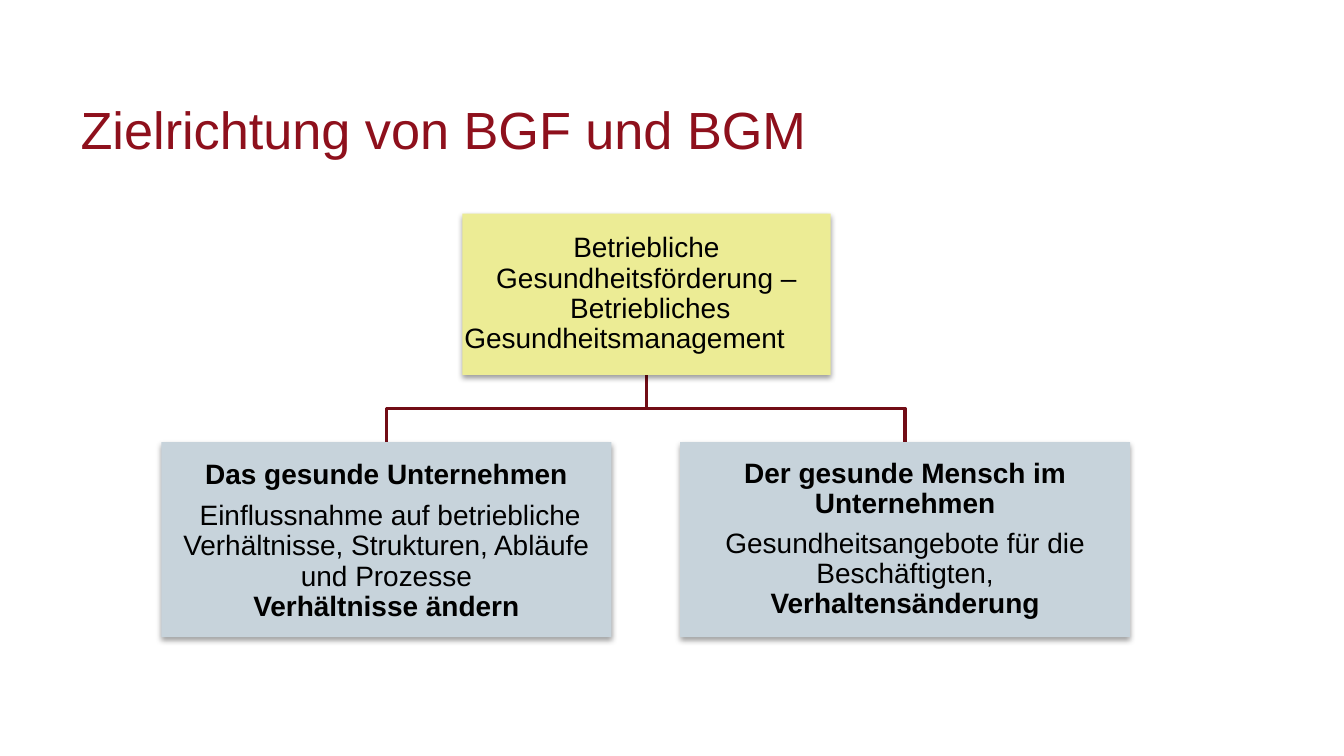
from dataclasses import dataclass

import lxml.etree
import pptx
import pptx.dml.color
import pptx.enum.shapes
import pptx.enum.text
import pptx.oxml
import pptx.util

Inches = pptx.util.Inches
Pt = pptx.util.Pt

TITLE_RED = "8E101C"
LINE_RED = "720D16"
YELLOW = "ECEC95"
GREY_BLUE = "C7D3DB"
BLACK = "000000"

DRAWING_NS = "http://schemas.openxmlformats.org/drawingml/2006/main"
BOX_SHADOW = (
    f'<a:outerShdw xmlns:a="{DRAWING_NS}" blurRad="{Pt(3.1)}" dist="{Pt(1.6)}" '
    'dir="5400000" rotWithShape="0">'
    f'<a:srgbClr val="{BLACK}"><a:alpha val="38000"/></a:srgbClr></a:outerShdw>'
)


@dataclass
class Run:
    text: str
    bold: bool = False
    size: float = 15


@dataclass
class Paragraph:
    runs: list[Run]
    line_spacing: float = 0.9
    space_after: float = 0
    tab_stop: float | None = None


@dataclass
class Box:
    left: float
    top: float
    width: float
    height: float
    fill: str
    paragraphs: list[Paragraph]

    @property
    def center(self) -> float:
        return self.left + self.width / 2

    @property
    def bottom(self) -> float:
        return self.top + self.height


def color(value: str) -> pptx.dml.color.RGBColor:
    return pptx.dml.color.RGBColor.from_string(value)


def add_text(paragraph, text: str, *, size: float, fill: str = BLACK, bold: bool = False) -> None:
    """Append text to a paragraph; a newline becomes a line break."""
    for index, line in enumerate(text.split("\n")):
        if index:
            paragraph.add_line_break()
        run = paragraph.add_run()
        run.text = line
        run.font.name = "Arial"
        run.font.size = Pt(size)
        run.font.bold = bold
        run.font.color.rgb = color(fill)


def add_tab_stop(paragraph, position: float) -> None:
    properties = paragraph._p.get_or_add_pPr()
    tabs = lxml.etree.SubElement(properties, f"{{{DRAWING_NS}}}tabLst")
    lxml.etree.SubElement(tabs, f"{{{DRAWING_NS}}}tab", pos=str(Inches(position)), algn="l")


def draw_box(slide, box: Box) -> None:
    shape = slide.shapes.add_shape(
        pptx.enum.shapes.MSO_SHAPE.RECTANGLE,
        Inches(box.left), Inches(box.top), Inches(box.width), Inches(box.height),
    )
    shape.fill.solid()
    shape.fill.fore_color.rgb = color(box.fill)
    shape.line.fill.background()
    shape.shadow.inherit = False
    effects = shape._element.spPr.find(f"{{{DRAWING_NS}}}effectLst")
    effects.append(pptx.oxml.parse_xml(BOX_SHADOW))

    frame = shape.text_frame
    frame.word_wrap = True
    frame.vertical_anchor = pptx.enum.text.MSO_ANCHOR.MIDDLE
    frame.margin_left = frame.margin_right = Inches(0.01)
    frame.margin_top = frame.margin_bottom = Inches(0.01)
    for index, content in enumerate(box.paragraphs):
        paragraph = frame.add_paragraph() if index else frame.paragraphs[0]
        if content.tab_stop is not None:
            add_tab_stop(paragraph, content.tab_stop)
        paragraph.alignment = pptx.enum.text.PP_ALIGN.CENTER
        paragraph.line_spacing = content.line_spacing
        paragraph.space_after = Pt(content.space_after)
        for run in content.runs:
            add_text(paragraph, run.text, size=run.size, bold=run.bold)


def draw_branch(slide, parent: Box, child: Box) -> None:
    """Draw the angled line from a parent box down to a child box."""
    middle = (parent.bottom + child.top) / 2
    start, *bends = [
        (Inches(x), Inches(y))
        for x, y in [
            (parent.center, parent.bottom), (parent.center, middle),
            (child.center, middle), (child.center, child.top),
        ]
    ]
    builder = slide.shapes.build_freeform(*start)
    builder.add_line_segments(bends, close=False)
    branch = builder.convert_to_shape()
    branch.fill.background()
    branch.line.color.rgb = color(LINE_RED)
    branch.line.width = Pt(2)
    branch.shadow.inherit = False


def draw_title(slide, text: str) -> None:
    title = slide.shapes.title
    title.left, title.top = Inches(0.5), Inches(0.67)
    title.width, title.height = Inches(6.68), Inches(0.75)
    frame = title.text_frame
    frame.auto_size = pptx.enum.text.MSO_AUTO_SIZE.NONE
    frame.vertical_anchor = pptx.enum.text.MSO_ANCHOR.TOP
    frame.paragraphs[0].alignment = pptx.enum.text.PP_ALIGN.LEFT
    add_text(frame.paragraphs[0], text, size=28, fill=TITLE_RED)


health_programme = Box(3.44, 1.59, 2.74, 1.2, YELLOW, [
    Paragraph([
        Run("Betriebliche Gesundheitsförderung –\n Betriebliches Gesundheitsmanagement"),
        Run("\t", size=9),
    ], space_after=12, tab_stop=2.71),
])
healthy_company = Box(1.2, 3.29, 3.35, 1.45, GREY_BLUE, [
    Paragraph([Run("Das gesunde Unternehmen", bold=True)], line_spacing=1, space_after=6),
    Paragraph([
        Run(" ", bold=True),
        Run("Einflussnahme auf betriebliche Verhältnisse, Strukturen, Abläufe und Prozesse"),
    ]),
    Paragraph([Run("Verhältnisse ändern", bold=True)], space_after=5),
])
healthy_person = Box(5.06, 3.29, 3.35, 1.45, GREY_BLUE, [
    Paragraph([Run("Der gesunde Mensch im Unternehmen", bold=True)], space_after=5),
    Paragraph([
        Run("Gesundheitsangebote für die Beschäftigten, "),
        Run("Verhaltensänderung", bold=True),
    ]),
])

# Widescreen slide, 16:9
presentation = pptx.Presentation()
presentation.slide_width = Inches(10)
presentation.slide_height = presentation.slide_width * 9 // 16
slide = presentation.slides.add_slide(presentation.slide_layouts[5])

draw_title(slide, "Zielrichtung von BGF und BGM")

# Branches lie behind the boxes
for goal in [healthy_person, healthy_company]:
    draw_branch(slide, health_programme, goal)
for box in [health_programme, healthy_company, healthy_person]:
    draw_box(slide, box)

presentation.save("out.pptx")
